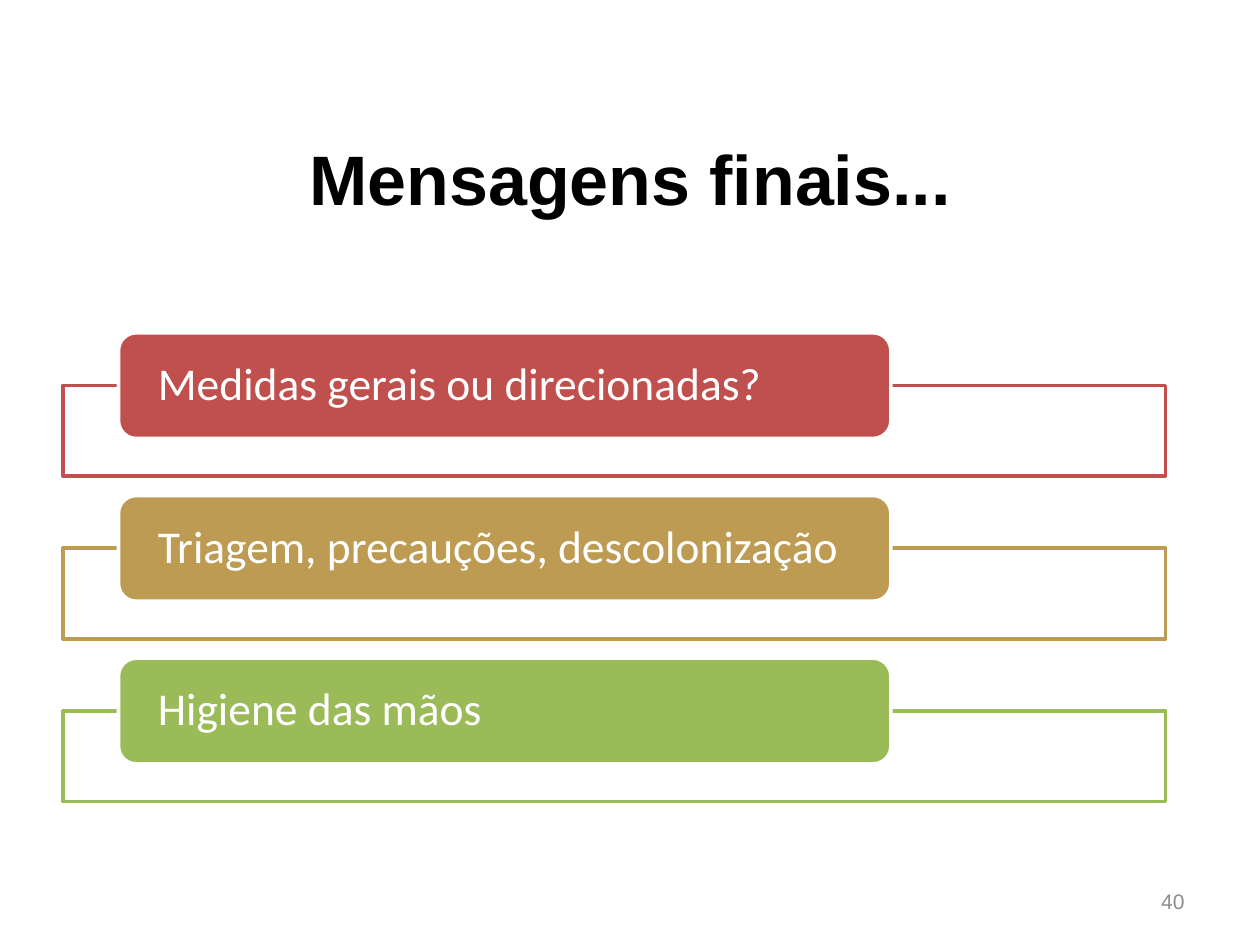
from dataclasses import dataclass

from lxml.etree import SubElement
from pptx import Presentation
from pptx.dml.color import RGBColor
from pptx.enum.shapes import MSO_SHAPE
from pptx.enum.text import MSO_ANCHOR, PP_ALIGN
from pptx.oxml.ns import qn
from pptx.shapes.autoshape import Shape
from pptx.slide import Slide
from pptx.text.text import Font
from pptx.util import Cm, Pt

COLORS = {
    "black": "000000",
    "white": "FFFFFF",
    "gray": "8C8C8C",
    "red": "C0504D",
    "gold": "BD9B53",
    "green": "9BBB59",
}


@dataclass
class Message:
    text: str
    color: str


MESSAGES = [
    Message("Medidas gerais ou direcionadas?", "red"),
    Message("Triagem, precauções, descolonização", "gold"),
    Message("Higiene das mãos", "green"),
]
FIRST_TOP = 6.71
PITCH = 3.28
FRAME_OFFSET = 1.06


def rgb(name: str) -> RGBColor:
    return RGBColor.from_string(COLORS[name])


def style_font(font: Font, name: str, size: int, color: str, bold: bool = False) -> None:
    font.name = name
    font.size = Pt(size)
    font.bold = bold
    font.color.rgb = rgb(color)


def add_box(s: Slide, kind: MSO_SHAPE, left: float, top: float, width: float,
            height: float, fill: str, line: str) -> Shape:
    sp = s.shapes.add_shape(kind, Cm(left), Cm(top), Cm(width), Cm(height))
    sp.shadow.inherit = False
    sp.fill.solid()
    sp.fill.fore_color.rgb = rgb(fill)
    sp.line.color.rgb = rgb(line)
    sp.line.width = Pt(2)
    return sp


def add_message(s: Slide, message: Message, top: float) -> None:
    frame = add_box(s, MSO_SHAPE.RECTANGLE, 1.27, top + FRAME_OFFSET, 22.23, 1.83,
                    "white", message.color)
    fill_color = frame.fill._xPr.find(qn("a:solidFill"))[0]
    SubElement(fill_color, qn("a:alpha"), val="90000")

    label = add_box(s, MSO_SHAPE.ROUNDED_RECTANGLE, 2.39, top, 15.57, 2.13,
                    message.color, "white")
    tf = label.text_frame
    tf.text = message.text
    tf.word_wrap = True
    tf.vertical_anchor = MSO_ANCHOR.MIDDLE
    tf.margin_left = tf.margin_right = Cm(0.69)
    tf.margin_top = tf.margin_bottom = 0
    p = tf.paragraphs[0]
    p.alignment = PP_ALIGN.LEFT
    p.line_spacing = 0.9
    style_font(p.runs[0].font, "Calibri", 26, "white")


def add_title(s: Slide, text: str) -> None:
    title = s.shapes.title
    title.left, title.top, title.width, title.height = Cm(1.27), Cm(1.98), Cm(22.86), Cm(3.18)
    tf = title.text_frame
    tf.text = text
    tf.vertical_anchor = MSO_ANCHOR.MIDDLE
    p = tf.paragraphs[0]
    p.alignment = PP_ALIGN.CENTER
    style_font(p.runs[0].font, "Arial", 40, "black", bold=True)


def add_page_number(s: Slide, text: str) -> None:
    tf = s.shapes.add_textbox(Cm(18.21), Cm(17.65), Cm(5.92), Cm(1.02)).text_frame
    tf.text = text
    tf.word_wrap = True
    tf.vertical_anchor = MSO_ANCHOR.MIDDLE
    p = tf.paragraphs[0]
    p.alignment = PP_ALIGN.RIGHT
    style_font(p.runs[0].font, "Arial", 12, "gray")


def main() -> None:
    prs = Presentation()
    prs.slide_width, prs.slide_height = Cm(25.4), Cm(19.05)
    s = prs.slides.add_slide(prs.slide_layouts[5])
    add_title(s, "Mensagens finais...")
    add_page_number(s, "40")
    for i, message in enumerate(MESSAGES):
        add_message(s, message, FIRST_TOP + i * PITCH)
    prs.save("out.pptx")


if __name__ == "__main__":
    main()
